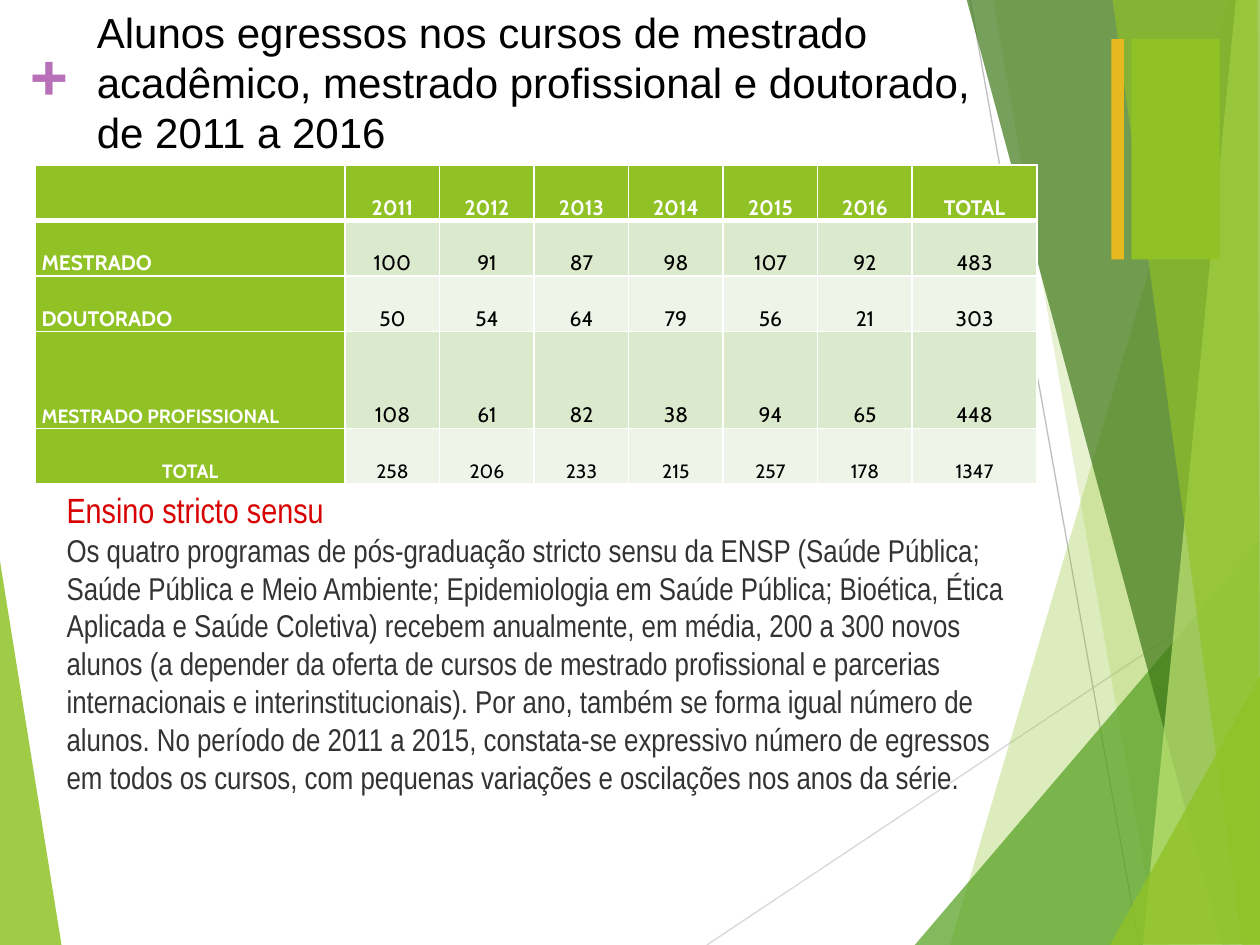
from lxml.etree import SubElement
from pptx import Presentation
from pptx.dml.color import RGBColor
from pptx.enum.shapes import MSO_CONNECTOR as CONNECTOR, MSO_SHAPE as SHAPE
from pptx.enum.text import MSO_ANCHOR as ANCHOR, PP_ALIGN as ALIGN
from pptx.oxml.ns import qn
from pptx.util import Inches, Pt

WHITE = RGBColor(0xFF, 0xFF, 0xFF)
BLACK = RGBColor(0, 0, 0)
LIME = RGBColor(0x90, 0xC2, 0x26)
GREEN = RGBColor(0x54, 0xA0, 0x21)
FOREST = RGBColor(0x3F, 0x78, 0x19)
PALE_LIME = RGBColor(0xC0, 0xE4, 0x74)
BAND_DARK = RGBColor(0xDB, 0xE9, 0xCD)
BAND_LIGHT = RGBColor(0xEE, 0xF4, 0xE8)
GOLD = RGBColor(0xE6, 0xB9, 0x1E)
PURPLE = RGBColor(0xB8, 0x70, 0xB8)
RED = RGBColor(0xD8, 0, 0)
CHARCOAL = RGBColor(0x33, 0x33, 0x33)
GRAY = RGBColor(0xD9, 0xD9, 0xD9)
MID_GRAY = RGBColor(0xBF, 0xBF, 0xBF)


def write(paragraph, text, color, **font_format):
    run = paragraph.add_run()
    run.text = text
    run.font.color.rgb = color
    for attribute, value in font_format.items():
        setattr(run.font, attribute, value)


def add_text_frame(left, top, width, height, **frame_format):
    box = slide.shapes.add_textbox(Inches(left), Inches(top), Inches(width), Inches(height))
    box.text_frame.word_wrap = True
    for attribute, value in frame_format.items():
        setattr(box.text_frame, attribute, value)
    return box.text_frame


prs = Presentation()
prs.slide_width, prs.slide_height = Inches(10), Inches(7.5)
slide = prs.slides.add_slide(prs.slide_layouts[6])

left_facet = ([(-0.01, 4.39), (0.49, 7.51), (-0.01, 7.5)], LIME, 85)
right_facets = [
    ([(9.75, 0), (7.54, 7.5), (10.02, 7.51), (10.01, 0.01)], LIME, 30),
    ([(7.88, -0.01), (9.19, 7.5), (10.01, 7.5), (10.01, -0.01)], LIME, 20),
    ([(7.26, 7.5), (10, 4.29), (10.01, 7.5)], GREEN, 72),
    ([(7.67, -0.01), (9.7, 7.5), (10.01, 7.49), (10.01, -0.01)], FOREST, 70),
    ([(9.81, -0.01), (9.07, 7.5), (10.01, 7.5), (10, -0.01)], PALE_LIME, 70),
    ([(8.83, -0.01), (9.86, 7.5), (10, 7.5), (9.98, -0.01)], LIME, 65),
    ([(8.81, 7.5), (10.01, 5.35), (10.01, 7.49)], LIME, 80),
]

for x1, y1, x2, y2, color in [(5.61, 7.5, 10.01, 4.57, GRAY), (7.7, 0, 9.04, 7.5, MID_GRAY)]:
    ray = slide.shapes.add_connector(
        CONNECTOR.STRAIGHT, Inches(x1), Inches(y1), Inches(x2), Inches(y2))
    ray.line.color.rgb = color
    ray.line.width = Pt(0.75)
    SubElement(ray._element.spPr, qn("a:effectLst"))

for points, color, opacity in [left_facet] + right_facets:
    corners = [(Inches(x), Inches(y)) for x, y in points]
    outline = slide.shapes.build_freeform(*corners[0])
    outline.add_line_segments(corners[1:], close=True)
    facet = outline.convert_to_shape()
    facet.shadow.inherit = False
    facet.fill.solid()
    facet.fill.fore_color.rgb = color
    facet.line.fill.background()
    fill_color = facet._element.spPr.find(qn("a:solidFill")).find(qn("a:srgbClr"))
    SubElement(fill_color, qn("a:alpha"), val=str(opacity * 1000))

for left, width, color in [(8.98, 0.7, LIME), (8.82, 0.1, GOLD)]:
    bar = slide.shapes.add_shape(
        SHAPE.RECTANGLE, Inches(left), Inches(0.31), Inches(width), Inches(1.75))
    bar.shadow.inherit = False
    bar.fill.solid()
    bar.fill.fore_color.rgb = color
    bar.line.fill.background()

plus = add_text_frame(0.24, 0.25, 0.28, 0.61,
                      margin_left=0, margin_right=0, margin_top=0, margin_bottom=0)
write(plus.paragraphs[0], "+", PURPLE, size=Pt(36), name="TeX Gyre Bonum", bold=True)

body = add_text_frame(0.43, 3.83, 7.82, 2.86)
write(body.paragraphs[0], "Ensino stricto sensu", RED, size=Pt(20), name="Arial Narrow")
write(
    body.add_paragraph(),
    "Os quatro programas de pós-graduação stricto sensu da ENSP (Saúde Pública; "
    "Saúde Pública e Meio Ambiente; Epidemiologia em Saúde Pública; Bioética, Ética "
    "Aplicada e Saúde Coletiva) recebem anualmente, em média, 200 a 300 novos "
    "alunos (a depender da oferta de cursos de mestrado profissional e parcerias "
    "internacionais e interinstitucionais). Por ano, também se forma igual número de "
    "alunos. No período de 2011 a 2015, constata-se expressivo número de egressos "
    "em todos os cursos, com pequenas variações e oscilações nos anos da série.",
    CHARCOAL, size=Pt(18), name="Arial Narrow")

graduates = [
    ["", "2011", "2012", "2013", "2014", "2015", "2016", "TOTAL"],
    ["MESTRADO", 100, 91, 87, 98, 107, 92, 483],
    ["DOUTORADO", 50, 54, 64, 79, 56, 21, 303],
    ["MESTRADO PROFISSIONAL", 108, 61, 82, 38, 94, 65, 448],
    ["TOTAL", 258, 206, 233, 215, 257, 178, 1347],
]
column_widths = [2.46] + [0.75] * 6 + [0.99]
row_heights = [0.44, 0.44, 0.44, 0.77, 0.44]
cell_format = {
    "vertical_anchor": ANCHOR.BOTTOM,
    "margin_left": Inches(0.05),
    "margin_right": Inches(0.05),
    "margin_top": 0,
    "margin_bottom": 0,
}
table = slide.shapes.add_table(
    len(row_heights), len(column_widths), Inches(0.28), Inches(1.31),
    Inches(sum(column_widths)), Inches(sum(row_heights))).table
for column, width in zip(table.columns, column_widths):
    column.width = Inches(width)
for row, height in zip(table.rows, row_heights):
    row.height = Inches(height)

for r, values in enumerate(graduates):
    for c, value in enumerate(values):
        cell = table.cell(r, c)
        for attribute, setting in cell_format.items():
            setattr(cell, attribute, setting)
        is_heading = r == 0 or c == 0
        for side in ("L", "R", "T", "B"):
            under_header = (r, side) in [(0, "B"), (1, "T")]
            border = SubElement(cell._tc.get_or_add_tcPr(), qn(f"a:ln{side}"),
                                w=str(Pt(3 if under_header else 1)))
            SubElement(SubElement(border, qn("a:solidFill")), qn("a:srgbClr"), val=str(WHITE))
        cell.fill.solid()
        cell.fill.fore_color.rgb = LIME if is_heading else BAND_DARK if r % 2 else BAND_LIGHT
        if value == "":
            continue
        paragraph = cell.text_frame.paragraphs[0]
        paragraph.alignment = ALIGN.LEFT if c == 0 and r < 4 else ALIGN.CENTER
        paragraph.line_spacing = 1.07
        small = r == 4 or (r, c) == (3, 0)
        write(paragraph, str(value), WHITE if is_heading else BLACK,
              size=Pt(11 if small else 12), name="Cabin", bold=is_heading)

title = add_text_frame(0.67, 0, 7.32, 1.3)
write(title.paragraphs[0],
      "Alunos egressos nos cursos de mestrado acadêmico, mestrado profissional "
      "e doutorado, de 2011 a 2016", BLACK, size=Pt(24), name="Arial")

prs.save("out.pptx")
